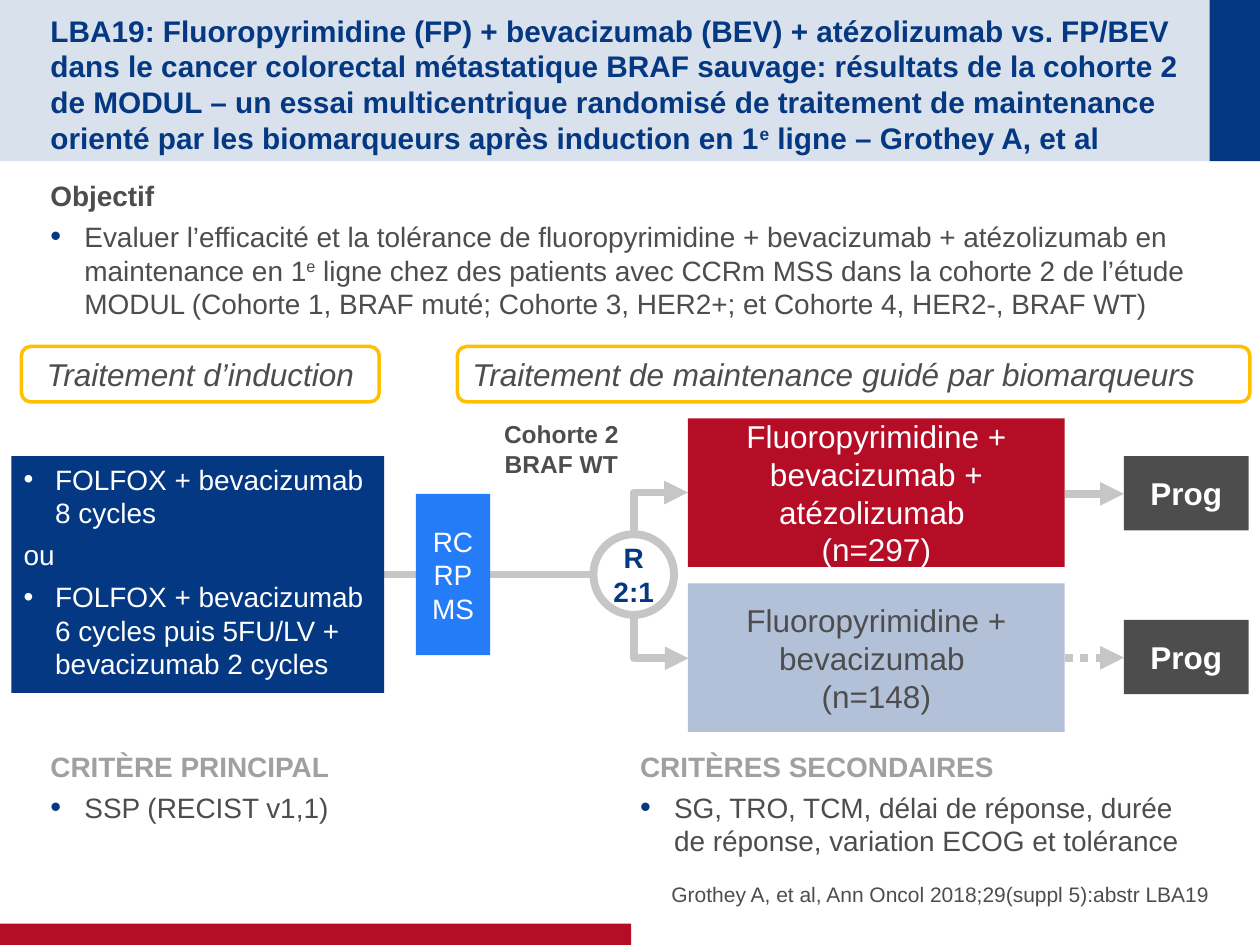
from lxml.etree import SubElement
from pptx import Presentation
from pptx.dml.color import RGBColor
from pptx.enum.dml import MSO_LINE
from pptx.enum.shapes import MSO_CONNECTOR, MSO_SHAPE
from pptx.enum.text import MSO_ANCHOR, MSO_AUTO_SIZE, PP_ALIGN
from pptx.oxml.ns import qn
from pptx.util import Inches, Pt

C = {"navy": "043882", "pale": "D9E1EC", "red": "B60D27", "text": "4D4D4D",
     "heading": "A0A0A0", "line": "C6C6C6", "white": "FFFFFF",
     "bright": "247CF8", "mist": "B2C0D8", "gold": "FFC000"}
LEFT, CENTER, RIGHT = PP_ALIGN.LEFT, PP_ALIGN.CENTER, PP_ALIGN.RIGHT
TOP, MIDDLE, BOTTOM = MSO_ANCHOR.TOP, MSO_ANCHOR.MIDDLE, MSO_ANCHOR.BOTTOM


def write(sp, paras, anchor=TOP, inset=(0, 0.05, 0, 0.05), wrap=True, **common):
    """Fill sp with (text, format) pairs; ^x^ is superscript, \\n a line break."""
    tf = sp.text_frame
    tf.auto_size, tf.word_wrap, tf.vertical_anchor = MSO_AUTO_SIZE.NONE, wrap, anchor
    tf.margin_left, tf.margin_top, tf.margin_right, tf.margin_bottom = map(Inches, inset)
    for i, (text, own) in enumerate(paras):
        f = {"size": 16, "color": "text", "bold": False, "italic": False,
             "align": LEFT, "after": 0, "indent": 0, "bullet": None} | common | own
        p = tf.add_paragraph() if i else tf.paragraphs[0]
        p.alignment, p.space_before, p.space_after = f["align"], Pt(0), Pt(f["after"])
        pPr = p._p.get_or_add_pPr()
        pPr.set("marL", str(Inches(f["indent"])))
        pPr.set("indent", str(-Inches(f["indent"])))
        if f["bullet"]:
            SubElement(SubElement(pPr, qn("a:buClr")), qn("a:srgbClr")).set("val", C[f["bullet"]])
            if f["bullet"] == "navy":
                SubElement(pPr, qn("a:buSzPct")).set("val", "110000")
            SubElement(pPr, qn("a:buFont")).set("typeface", "Arial")
            SubElement(pPr, qn("a:buChar")).set("char", "•")
        else:
            SubElement(pPr, qn("a:buNone"))
        for j, part in enumerate(text.split("^")):
            for k, line in enumerate(part.split("\n")):
                if k:
                    p.add_line_break()
                r = p.add_run()
                r.text = line
                r.font.name, r.font.size = "Arial", Pt(f["size"])
                r.font.bold, r.font.italic = f["bold"], f["italic"]
                r.font.color.rgb = RGBColor.from_string(C[f["color"]])
                if j % 2:
                    r.font._element.set("baseline", "30000")


def connect(x1, y1, x2, y2, arrow=True, dash=None):
    """Add a thick grey connector and return it."""
    cx = s.shapes.add_connector(MSO_CONNECTOR.STRAIGHT, *map(Inches, (x1, y1, x2, y2)))
    cx.line.color.rgb = RGBColor.from_string(C["line"])
    cx.line.width = Pt(4.5)
    if dash:
        cx.line.dash_style = dash
    if arrow:
        SubElement(cx.line._get_or_add_ln(), qn("a:tailEnd")).set("type", "triangle")
    SubElement(cx._element.spPr, qn("a:effectLst"))
    return cx


prs = Presentation()
prs.slide_width, prs.slide_height = Inches(10), Inches(7.5)
s = prs.slides.add_slide(prs.slide_layouts[3])
title, objective, reference = s.placeholders

# Page bands, kept behind the placeholders
bands = [(0, 0, 10, 1.28, "pale"), (9.6, 0, 0.4, 1.28, "navy"), (0, 7.33, 5.01, 0.17, "red")]
for i, (*at, color) in enumerate(bands):
    sp = s.shapes.add_shape(MSO_SHAPE.RECTANGLE, *map(Inches, at))
    sp.shadow.inherit = False
    sp.fill.solid()
    sp.fill.fore_color.rgb = RGBColor.from_string(C[color])
    sp.line.fill.background()
    s.shapes._spTree.insert(2 + i, sp._element)

# Title, lists and reference
primary, secondary, cohort = (
    s.shapes.add_textbox(0, 0, Inches(1), Inches(1)) for _ in range(3))
for sp, at in [(title, (0.4, 0.2, 9.01, 0.88)), (objective, (0.4, 1.37, 9.2, 1.24)),
               (reference, (5.08, 6.67, 4.52, 0.53)), (primary, (0.4, 5.9, 4.52, 0.89)),
               (secondary, (5.08, 5.9, 4.52, 0.94)), (cohort, (3.72, 3.28, 1.47, 0.57))]:
    sp.left, sp.top, sp.width, sp.height = map(Inches, at)

write(title, [("LBA19: Fluoropyrimidine (FP) + bevacizumab (BEV) + atézolizumab vs. FP/BEV dans le "
               "cancer colorectal métastatique BRAF sauvage: résultats de la cohorte 2 de MODUL – un "
               "essai multicentrique randomisé de traitement de maintenance orienté par les "
               "biomarqueurs après induction en 1^e^ ligne – Grothey A, et al", {})],
      anchor=MIDDLE, inset=(0, 0.05, 0, 0), size=17, color="navy", bold=True)
write(reference, [("Grothey A, et al, Ann Oncol 2018;29(suppl 5):abstr LBA19", {})],
      anchor=BOTTOM, inset=(0, 0, 0, 0), size=12, align=RIGHT, after=4)
write(cohort, [("Cohorte 2 BRAF WT", {})], inset=(0.1, 0.05, 0.1, 0.05),
      size=14, bold=True, align=CENTER)

sections = [
    (objective, "Objectif", "text",
     "Evaluer l’efficacité et la tolérance de fluoropyrimidine + bevacizumab + atézolizumab en "
     "maintenance en 1^e^ ligne chez des patients avec CCRm MSS dans la cohorte 2 de l’étude "
     "MODUL (Cohorte 1, BRAF muté; Cohorte 3, HER2+; et Cohorte 4, HER2-, BRAF WT)"),
    (primary, "CRITÈRE PRINCIPAL", "heading", "SSP (RECIST v1,1)"),
    (secondary, "CRITÈRES SECONDAIRES", "heading",
     "SG, TRO, TCM, délai de réponse, durée de réponse, variation ECOG et tolérance"),
]
for sp, heading, color, item in sections:
    write(sp, [(heading, {"bold": True, "color": color}),
               (item, {"bullet": "navy", "indent": 0.27})], after=4)

# Trial flow: straight lines, then the two elbows out of the randomisation
ARM_Y, MID_Y = (3.92, 5.22), 4.56
connect(3.05, MID_Y, 3.3, MID_Y, arrow=False)
connect(3.89, MID_Y, 4.71, MID_Y, arrow=False)
for y, dash in zip(ARM_Y, (None, MSO_LINE.ROUND_DOT)):
    connect(8.45, y, 8.92, y, dash=dash)
for y, h, turn, flips in [(3.86, 0.33, 90, ("flipH", "flipV")), (4.84, 0.34, 270, ("flipH",))]:
    cx = connect(5.08, y, 5.08 + h, y + 0.43)
    cx._element.spPr.find(qn("a:prstGeom")).set("prst", "bentConnector2")
    xfrm = cx._element.spPr.find(qn("a:xfrm"))
    xfrm.set("rot", str(turn * 60000))
    for flip in flips:
        xfrm.set(flip, "1")

# Trial boxes: preset, place, fill, line, line width, paragraphs, format
RECT, ROUND, OVAL = MSO_SHAPE.RECTANGLE, MSO_SHAPE.ROUNDED_RECTANGLE, MSO_SHAPE.OVAL
bullet = {"bullet": "white", "indent": 0.25}
label = {"size": 18, "italic": True}
arm = {"size": 18, "align": CENTER}
boxes = [
    (RECT, (0.09, 3.62, 2.96, 1.88), "navy", None, 0,
     [("FOLFOX + bevacizumab 8 cycles", bullet), ("ou", {}),
      ("FOLFOX + bevacizumab 6 cycles puis 5FU/LV + bevacizumab 2 cycles", bullet)],
     {"color": "white", "after": 4.8, "anchor": TOP, "inset": (0.1, 0.05, 0.1, 0.05)}),
    (RECT, (3.3, 3.92, 0.59, 1.28), "bright", None, 0, [("RC\nRP\nMS", {})],
     {"color": "white", "align": CENTER}),
    (OVAL, (4.71, 4.24, 0.64, 0.64), None, "line", 4.5, [("R\n2:1", {})],
     {"color": "navy", "bold": True, "align": CENTER, "wrap": False}),
    (RECT, (5.46, 3.32, 2.99, 1.18), "red", None, 0,
     [("Fluoropyrimidine + bevacizumab + atézolizumab \n(n=297)", {})], arm | {"color": "white"}),
    (RECT, (5.46, 4.63, 2.99, 1.18), "mist", None, 0,
     [("Fluoropyrimidine + bevacizumab \n(n=148)", {})], arm),
    (ROUND, (0.17, 2.75, 2.84, 0.44), None, "gold", 2,
     [("Traitement d’induction", {})], label | {"align": CENTER}),
    (ROUND, (3.63, 2.75, 6.29, 0.44), None, "gold", 2,
     [("Traitement de maintenance guidé par biomarqueurs", {})], label),
]
boxes += [(RECT, (8.92, y - 0.3, 0.99, 0.59), "text", None, 0, [("Prog", {})],
           arm | {"color": "white", "bold": True}) for y in ARM_Y]
for preset, at, fill, line, width, paras, fmt in boxes:
    sp = s.shapes.add_shape(preset, *map(Inches, at))
    sp.shadow.inherit = False
    if fill:
        sp.fill.solid()
        sp.fill.fore_color.rgb = RGBColor.from_string(C[fill])
    else:
        sp.fill.background()
    if line:
        sp.line.color.rgb = RGBColor.from_string(C[line])
        sp.line.width = Pt(width)
    else:
        sp.line.fill.background()
    write(sp, paras, **({"anchor": MIDDLE, "inset": (0.1, 0, 0.1, 0)} | fmt))

prs.save("out.pptx")
